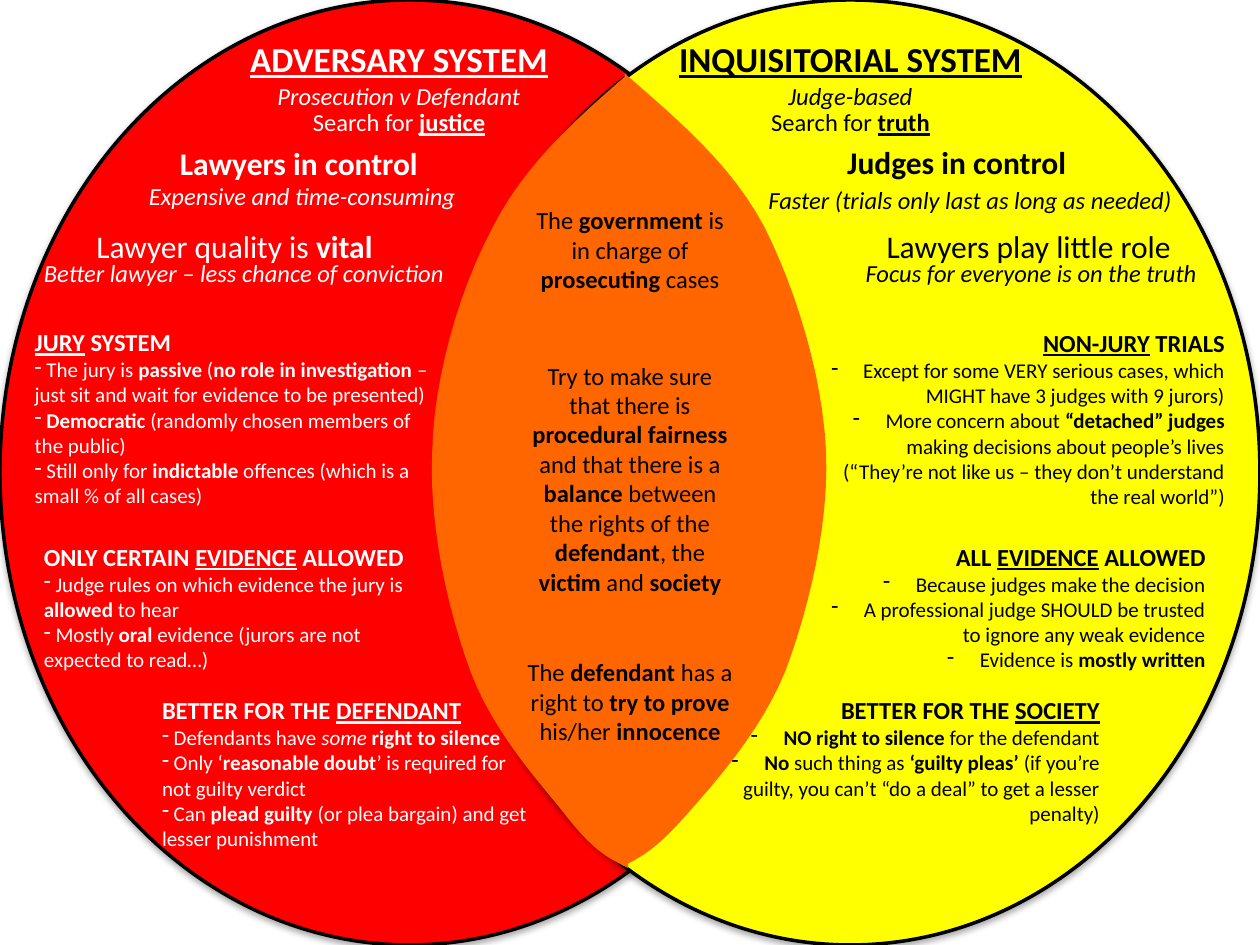
import pptx
import pptx.util
import pptx.dml.color
import pptx.enum.shapes
import pptx.enum.text
import pptx.oxml
import pptx.oxml.ns

Pt = pptx.util.Pt
RGB = pptx.dml.color.RGBColor.from_string
ALIGN = pptx.enum.text.PP_ALIGN
LEFT, CENTER, RIGHT = ALIGN.LEFT, ALIGN.CENTER, ALIGN.RIGHT

theme = {
    "font": "Calibri",
    "adversary": "FF0000", "inquisitorial": "FFFF00", "shared": "FF6600",
    "light": "FFFFFF", "dark": "000000",
    "title": 20, "claim": 18, "body": 14, "detail": 12,
}

prs = pptx.Presentation()
prs.slide_width, prs.slide_height = Pt(720), Pt(540)
s = prs.slides.add_slide(prs.slide_layouts[6])


def add_text(text, x, y, w, h, size="body", color="dark", align=LEFT, wrap=True, hang=0):
    """Lines after the first are dashed; * bold, _ underline and ~ italic toggle."""
    sp = s.shapes.add_textbox(Pt(x), Pt(y), Pt(w), Pt(h))
    tf = sp.text_frame
    tf.word_wrap = wrap
    tf.auto_size = pptx.enum.text.MSO_AUTO_SIZE.SHAPE_TO_FIT_TEXT
    tf.margin_bottom = Pt(0 if wrap else 3.6)
    for n, line in enumerate(text.split("\n")):
        p = tf.paragraphs[0] if n == 0 else tf.add_paragraph()
        p.alignment = align
        if n > 0:
            pPr = p._p.get_or_add_pPr()
            pPr.set("marL", "0")
            pPr.set("indent", str(-Pt(hang)))
            pptx.oxml.ns.qn("a:buChar")
            bullet = pPr.makeelement(pptx.oxml.ns.qn("a:buChar"), {"char": "-"})
            pPr.append(bullet)
        style = {"*": False, "_": False, "~": False}
        piece = ""
        for ch in line + "\n":
            if ch not in style and ch != "\n":
                piece += ch
                continue
            if piece:
                r = p.add_run()
                r.text = piece
                r.font.name = theme["font"]
                r.font.size = Pt(theme["detail" if n else size])
                r.font.color.rgb = RGB(theme[color])
                r.font.bold, r.font.underline, r.font.italic = style.values()
                piece = ""
            if ch in style:
                style[ch] = not style[ch]


for x, fill in ((0, "adversary"), (252, "inquisitorial")):
    sp = s.shapes.add_shape(pptx.enum.shapes.MSO_SHAPE.OVAL, Pt(x), Pt(0), Pt(468), Pt(540))
    sp.fill.solid()
    sp.fill.fore_color.rgb = RGB(theme[fill])
    sp.line.color.rgb = RGB(theme["dark"])
    sp.line.width = Pt(2)
    sp.shadow.inherit = False
    sp._element.spPr.find(pptx.oxml.ns.qn("a:effectLst")).append(pptx.oxml.parse_xml(
        f'<a:outerShdw {pptx.oxml.ns.nsdecls("a")} blurRad="{Pt(3.1)}" dist="{Pt(1.8)}" '
        'dir="5400000" rotWithShape="0"><a:srgbClr val="000000"><a:alpha val="35000"/>'
        '</a:srgbClr></a:outerShdw>'))

lens_halves = (
    [(358, 43), (328, 69), (299, 95), (281, 131), (262, 167), (248, 216), (247, 258),
     (245, 300), (256, 349), (269, 384), (282, 419), (310, 449), (325, 468),
     (340, 487), (349, 491), (359, 496)],
    [(357, 42), (387, 68), (418, 94), (437, 130), (455, 166), (470, 215), (472, 257),
     (474, 300), (462, 348), (449, 383), (435, 418), (407, 449), (391, 467),
     (375, 485), (366, 490), (356, 495)],
)
steps = 12
for knots in lens_halves:
    outline = []
    for i in range(0, len(knots) - 1, 3):
        for k in range(1, steps + 1):
            t = k / steps
            weights = ((1 - t) ** 3, 3 * t * (1 - t) ** 2, 3 * t * t * (1 - t), t ** 3)
            outline.append([sum(c * q[axis] for c, q in zip(weights, knots[i:i + 4]))
                            for axis in (0, 1)])
    x, y = knots[0]
    fb = s.shapes.build_freeform(Pt(x), Pt(y), scale=1)
    fb.add_line_segments([(Pt(px), Pt(py)) for px, py in outline], close=True)
    sp = fb.convert_to_shape()
    sp.fill.solid()
    sp.fill.fore_color.rgb = RGB(theme["shared"])
    sp.line.fill.background()
    sp.shadow.inherit = False

for y, h, text in (
    (113.75, 55, "The *government *is in charge of *prosecuting *cases"),
    (202.5, 140, "Try to make sure that there is *procedural fairness* and that there is a "
                 "*balance* between the rights of the *defendant*, the *victim* and *society*"),
    (372, 55, "The *defendant *has a right to *try to prove *his/her *innocence*"),
):
    add_text(text, 294, y, 132, h, align=CENTER)

for x, color, lines in (
    (114, "light", ("*_ADVERSARY SYSTEM_*", "~Prosecution v Defendant~", "Search for *_justice_*")),
    (372, "dark", ("*_INQUISITORIAL SYSTEM_*", "~Judge-based~", "Search for *_truth_*")),
):
    for text, y, h, size in zip(lines, (18, 42.5, 57.75), (28, 21, 21), ("title", "body", "body")):
        add_text(text, x, y, 228, h, size=size, color=color, align=CENTER)

for text, x, y, w, size, color in (
    ("*Lawyers in control*", 95.75, 78.5, 152, "claim", "light"),
    ("~Expensive and time-consuming~", 78, 100, 194.5, "body", "light"),
    ("Lawyer quality is *vital*", 48, 126, 174, "claim", "light"),
    ("~Better lawyer – less chance of conviction~", 18, 144, 248.5, "body", "light"),
    ("*Judges in control*", 477, 78, 141, "claim", "dark"),
    ("~Faster (trials only last as long as needed)~", 432, 102, 250, "body", "dark"),
    ("Lawyers play little role", 499.5, 126, 178.5, "claim", "dark"),
    ("~Focus for everyone is on the truth~", 487.5, 144, 209, "body", "dark"),
):
    add_text(text, x, y, w, 29 if size == "claim" else 24, size=size, color=color, wrap=False)

for text, x, y, w, h in (
    ("*_JURY_ SYSTEM*\n"
     " The jury is *passive* (*no role in investigation *– just sit and wait for evidence "
     "to be presented)\n"
     " *Democratic *(randomly chosen members of the public)\n"
     " Still only for *indictable* offences (which is a small % of all cases)",
     12.75, 183.5, 239, 108),
    ("*ONLY CERTAIN _EVIDENCE_ ALLOWED*\n"
     " Judge rules on which evidence the jury is *allowed* to hear\n"
     " Mostly *oral *evidence (jurors are not expected to read…)",
     18, 306, 228, 78.5),
    ("*BETTER FOR THE _DEFENDANT_*\n"
     " Defendants have ~some ~*right to silence*\n"
     " Only ‘*reasonable doubt*’ is required for not guilty verdict\n"
     " Can *plead guilty* (or plea bargain) and get lesser punishment",
     85.5, 393.75, 228, 93.5),
):
    add_text(text, x, y, w, h, color="light")

for text, x, y, w, h in (
    ("*_NON-JURY_ TRIALS*\n"
     " Except for some VERY serious cases, which MIGHT have 3 judges with 9 jurors)\n"
     " More concern about *“detached” judges *making decisions about people’s lives "
     "(“They’re not like us – they don’t understand the real world”)",
     468, 184, 239, 108),
    ("*ALL _EVIDENCE_ ALLOWED*\n"
     " Because judges make the decision\n"
     " A professional judge SHOULD be trusted to ignore any weak evidence\n"
     " Evidence is *mostly written*",
     468, 306, 228, 78.5),
    ("*BETTER FOR THE _SOCIETY_*\n"
     " *NO right to silence* for the defendant\n"
     " *No *such thing as *‘guilty pleas’* (if you’re guilty, you can’t “do a deal” "
     "to get a lesser penalty)",
     407.5, 393.75, 228, 78.5),
):
    add_text(text, x, y, w, h, align=RIGHT, hang=16)

prs.save("out.pptx")
